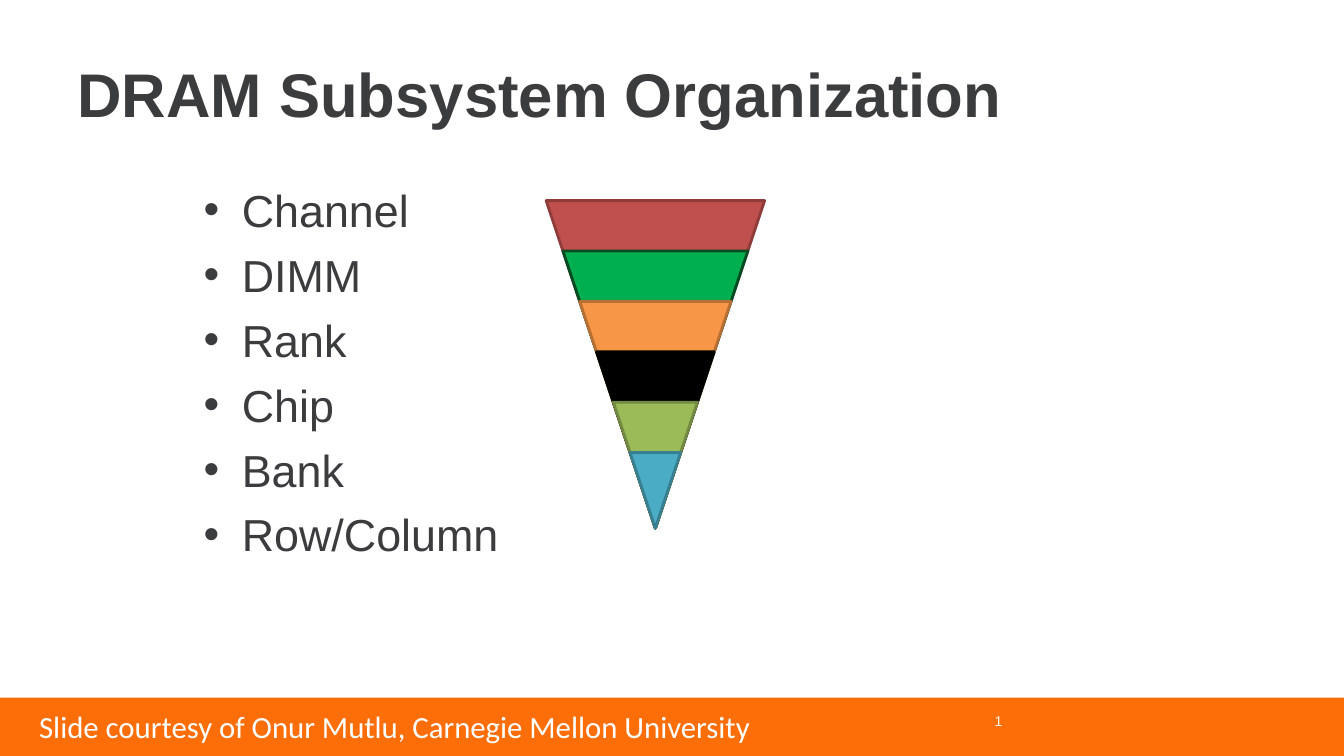
from pptx import Presentation
from pptx.dml.color import RGBColor
from pptx.enum.shapes import MSO_SHAPE
from pptx.enum.text import MSO_ANCHOR, PP_ALIGN
from pptx.oxml.ns import qn
from pptx.util import Inches, Pt
from lxml import etree

RECT, TRIANGLE = MSO_SHAPE.RECTANGLE, MSO_SHAPE.FLOWCHART_MERGE
TOP, MIDDLE = MSO_ANCHOR.TOP, MSO_ANCHOR.MIDDLE
LEFT, RIGHT = PP_ALIGN.LEFT, PP_ALIGN.RIGHT


def rgb(value):
    return RGBColor.from_string(value)


class SlideBuilder:
    font, ink, white, orange = "Arial", "3B3C3E", "FFFFFF", "FD6D08"

    def __init__(self, slide):
        self.s = slide

    def shape(self, kind, x, y, w, h, fill, line=None):
        sp = self.s.shapes.add_shape(kind, Inches(x), Inches(y), Inches(w), Inches(h))
        sp.shadow.inherit = False
        sp.fill.solid()
        sp.fill.fore_color.rgb = rgb(fill)
        if line:
            sp.line.color.rgb = rgb(line)
            sp.line.width = Pt(2)
        else:
            sp.line.fill.background()

    def text(self, lines, x, y, w, h, size, color=None, font=None, bold=False,
             anchor=TOP, align=LEFT, wrap=True, bullets=False):
        sp = self.s.shapes.add_textbox(Inches(x), Inches(y), Inches(w), Inches(h))
        tf = sp.text_frame
        tf.word_wrap = wrap
        tf.vertical_anchor = anchor
        for i, line in enumerate(lines):
            p = tf.add_paragraph() if i else tf.paragraphs[0]
            p.alignment = align
            if i:
                p.space_before = Pt(8)
            if bullets:
                self.bullet(p)
            r = p.add_run()
            r.text = line
            r.font.name = font or self.font
            r.font.size = Pt(size)
            r.font.bold = bold
            r.font.color.rgb = rgb(color or self.ink)

    def bullet(self, p):
        pPr = p._p.get_or_add_pPr()
        pPr.set("marL", str(Inches(0.38)))
        pPr.set("indent", str(-Inches(0.38)))
        etree.SubElement(pPr, qn("a:buFont")).set("typeface", self.font)
        etree.SubElement(pPr, qn("a:buChar")).set("char", "•")


def main():
    prs = Presentation()
    prs.slide_width, prs.slide_height = Inches(13.33), Inches(7.5)
    b = SlideBuilder(prs.slides.add_slide(prs.slide_layouts[6]))

    # Footer band
    b.shape(RECT, 0, 6.92, 13.33, 0.58, b.orange)

    # Title and levels
    b.text(["DRAM Subsystem Organization"], 0.67, 0.3, 12, 1.25, 44,
           bold=True, anchor=MIDDLE)
    b.text(["Channel", "DIMM", "Rank", "Chip", "Bank", "Row/Column"],
           1.92, 1.76, 9.42, 5.01, 32, bullets=True)

    # Nested triangles sharing one tip, each level half an inch shorter
    tip_x, tip_y = 6.5, 5.24
    level_colors = [("C0504D", "8E3B39"), ("00B050", "004C22"), ("F79646", "B76F34"),
                    ("000000", "000000"), ("9BBB59", "738A42"), ("4BACC6", "377F92")]
    for i, (fill, line) in enumerate(level_colors):
        h = 3.25 - 0.5 * i
        w = h * 2 / 3
        b.shape(TRIANGLE, tip_x - w / 2, tip_y - h, w, h, fill, line)

    # Footer text
    b.text(["1"], 6.93, 6.95, 3.11, 0.4, 10, b.white, anchor=MIDDLE, align=RIGHT)
    b.text(["Slide courtesy of Onur Mutlu, Carnegie Mellon University"],
           0.29, 6.97, 7.33, 0.47, 22, b.white, font="Calibri", wrap=False)

    prs.save("out.pptx")


if __name__ == "__main__":
    main()
